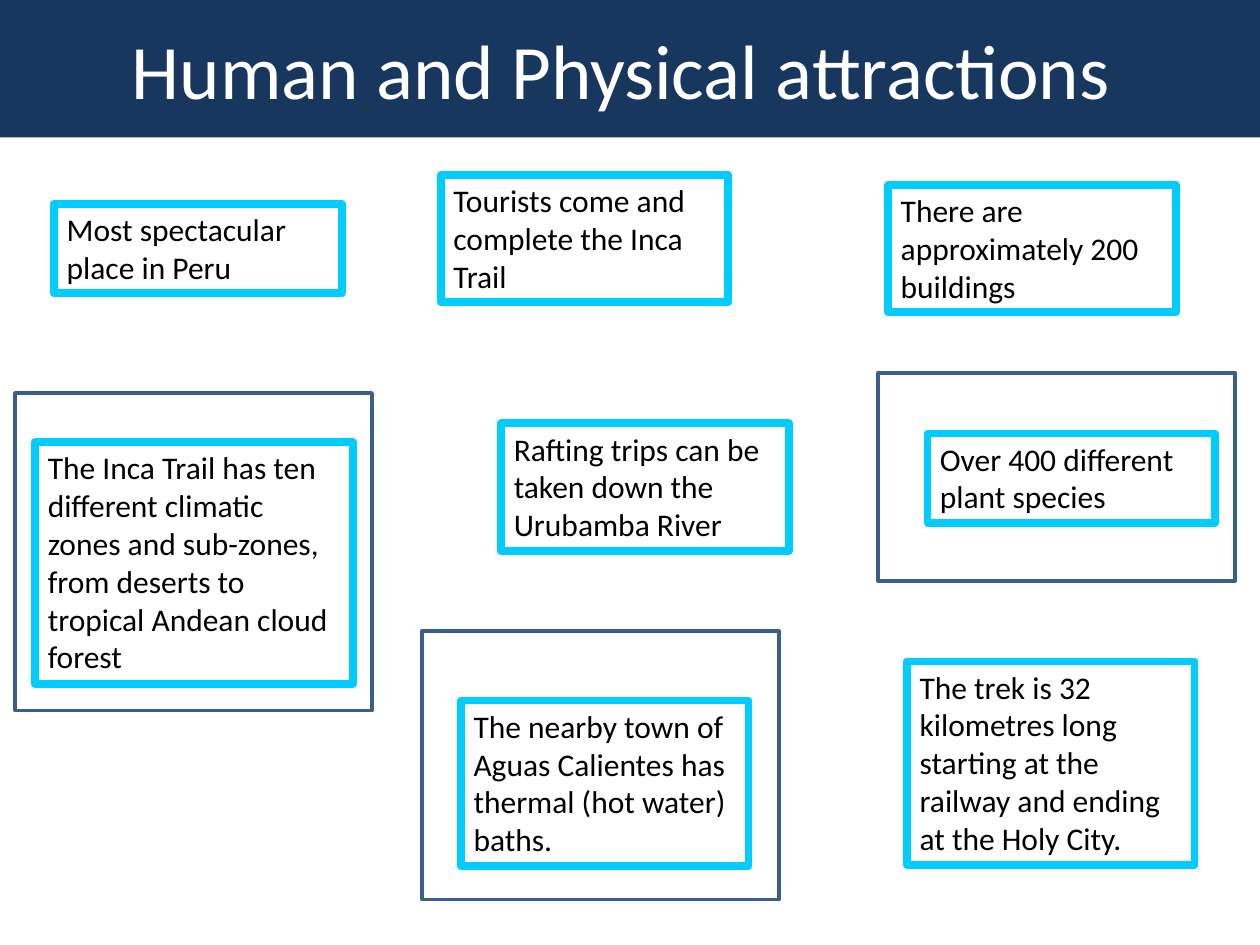
from pptx import Presentation
from pptx.dml import color
from pptx.enum import shapes, text
from pptx.util import Pt

WIDE, HIGH = 720, 540
NAVY, CYAN, STEEL = "17375E", "00CCFF", "3A5F8C"
FACTS = [
    (31, 116.6, 164.2, 2, "Most spectacular place in Peru"),
    (252, 100, 164.2, 3, "Tourists come and complete the Inca Trail"),
    (518.4, 378, 164.2, 5, "The trek is 32 kilometres long starting at the railway "
     "and ending at the Holy City."),
    (263.5, 400.3, 164.2, 4, "The nearby town of Aguas Calientes has thermal "
     "(hot water) baths."),
    (286.5, 242, 164.2, 3, "Rafting trips can be taken down the Urubamba River"),
    (20.2, 252.7, 181.4, 6, "The Inca Trail has ten different climatic zones and "
     "sub-zones, from deserts to tropical Andean cloud forest"),
    (507.6, 105.8, 164.2, 3, "There are approximately 200 buildings"),
    (530, 247.7, 164.2, 2, "Over 400 different plant species"),
]
FRAMES = [(501.8, 213.1, 118.8), (8.6, 224.6, 181.4), (241.2, 360.7, 153.4)]


def rgb(code):
    """Turn a hex string into a colour."""
    return color.RGBColor.from_string(code)


def write(frame, words, size, ink):
    """Add one run of words to the first paragraph of a text frame."""
    run = frame.paragraphs[0].add_run()
    run.text = words
    run.font.name = "Calibri"
    run.font.size = Pt(size)
    run.font.color.rgb = rgb(ink)


def edge(box, tint, width):
    """Give a shape an outline and no fill."""
    box.fill.background()
    box.line.color.rgb = rgb(tint)
    box.line.width = Pt(width)


def block(slide, x, y, w, h):
    """Place a plain rectangle without a shadow."""
    box = slide.shapes.add_shape(
        shapes.MSO_SHAPE.RECTANGLE, Pt(x), Pt(y), Pt(w), Pt(h))
    box.shadow.inherit = False
    return box


def banner(slide, x, y, w, h):
    """Place the title band."""
    box = block(slide, x, y, w, h)
    box.fill.solid()
    box.fill.fore_color.rgb = rgb(NAVY)
    box.line.fill.background()
    frame = box.text_frame
    frame.word_wrap = True
    frame.vertical_anchor = text.MSO_ANCHOR.MIDDLE
    frame.paragraphs[0].alignment = text.PP_ALIGN.CENTER
    write(frame, "Human and Physical attractions ", 44, "FFFFFF")


def fact(slide, x, y, w, rows, words):
    """Place one fact in a box as tall as its rows of text."""
    box = slide.shapes.add_textbox(Pt(x), Pt(y), Pt(w), Pt(7.4 + 21.8 * rows))
    edge(box, CYAN, 4.5)
    frame = box.text_frame
    frame.word_wrap = True
    frame.auto_size = text.MSO_AUTO_SIZE.SHAPE_TO_FIT_TEXT
    write(frame, words, 18, "000000")


def main():
    """Build the slide and save it."""
    deck = Presentation()
    deck.slide_width, deck.slide_height = Pt(WIDE), Pt(HIGH)
    slide = deck.slides.add_slide(deck.slide_layouts[6])
    banner(slide, 0, 0, WIDE, 78.5)
    for item in FACTS:
        fact(slide, *item)
    for x, y, h in FRAMES:
        edge(block(slide, x, y, 204, h), STEEL, 2)
    deck.save("out.pptx")


if __name__ == "__main__":
    main()
